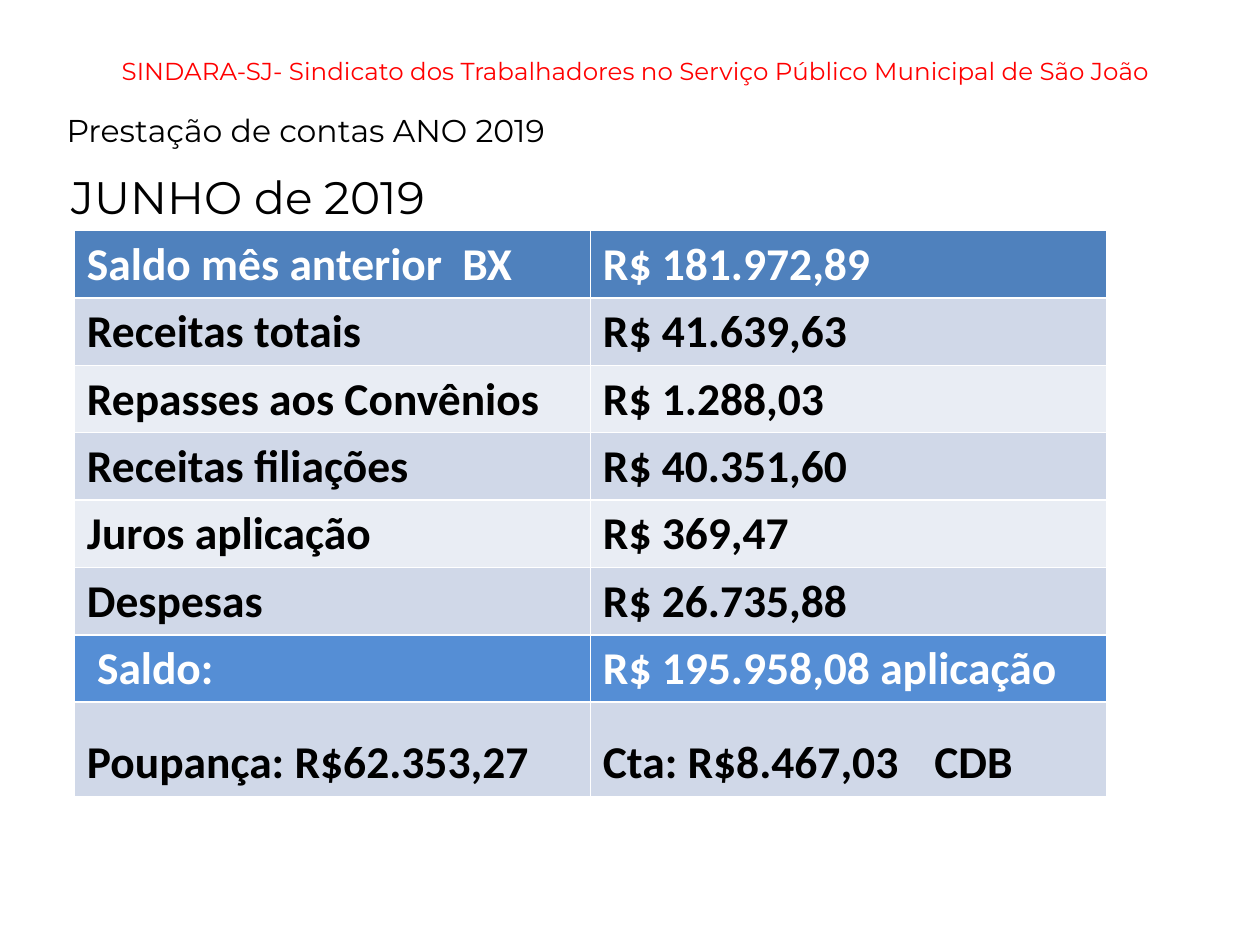
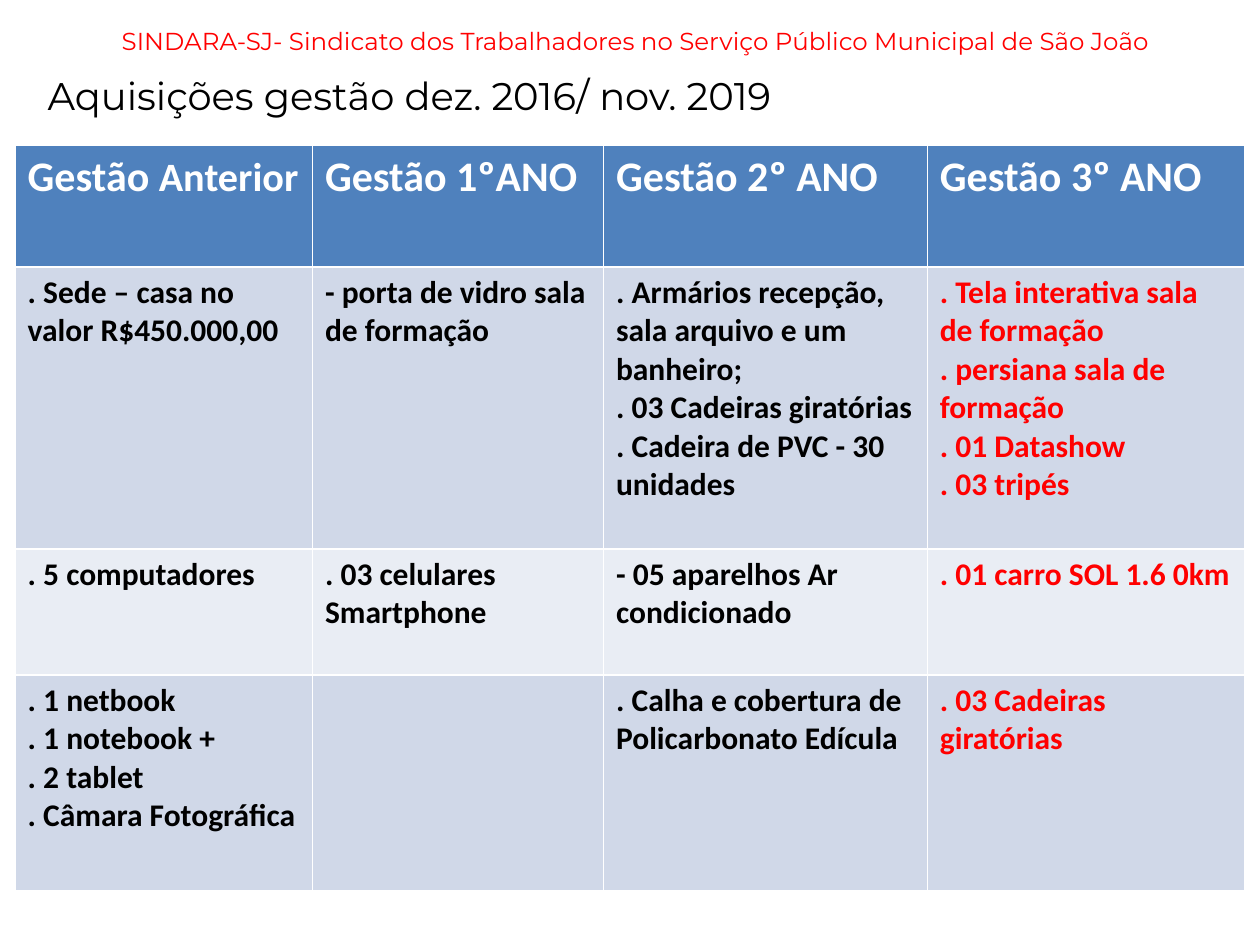
import pptx
import pptx.util
import pptx.dml.color
import pptx.enum.text
import lxml.etree

WIDTH, HEIGHT = 10, 7.5
BLACK, WHITE, RED = "000000", "FFFFFF", "FF0000"
HEADER, TOTAL = "4F81BD", "558ED5"
BANDS = ("E9EDF4", "D0D8E8")
TITLE_FONT, TABLE_FONT = "Montserrat", "Calibri"
UNION = "SINDARA-SJ- Sindicato dos Trabalhadores no Serviço Público Municipal de São João"
ALIGN = pptx.enum.text.PP_ALIGN
ANCHOR = pptx.enum.text.MSO_ANCHOR

BALANCE = [
    ("Saldo mês anterior\tBX", "R$ 181.972,89"),
    ("Receitas totais", "R$ 41.639,63"),
    ("Repasses aos Convênios", "R$ 1.288,03"),
    ("Receitas filiações", "R$ 40.351,60"),
    ("Juros aplicação", "R$ 369,47"),
    ("Despesas", "R$ 26.735,88"),
    ("Saldo:", "R$ 195.958,08 aplicação"),
    ("Poupança: R$62.353,27", "Cta: R$8.467,03\tCDB"),
]
PURCHASES = [
    ("Gestão ", "Gestão 1ºANO", "Gestão 2º ANO", "Gestão 3º ANO"),
    (". Sede – casa no valor R$450.000,00",
     "- porta de vidro sala de formação",
     ". Armários recepção, sala arquivo e um banheiro;\n"
     ". 03 Cadeiras giratórias\n. Cadeira de PVC - 30 unidades",
     ". Tela interativa sala de formação\n. persiana sala de formação\n"
     ". 01 Datashow\n. 03 tripés"),
    (". 5 computadores", ". 03 celulares Smartphone",
     "- 05 aparelhos Ar condicionado", ". 01 carro SOL 1.6 0km"),
    (". 1 netbook\n. 1 notebook +\n. 2 tablet\n. Câmara Fotográfica", "",
     ". Calha e cobertura de Policarbonato Edícula", ". 03 Cadeiras giratórias"),
]


def color(value):
    return pptx.dml.color.RGBColor.from_string(value)


def percent_box(x, y, w, h):
    return [pptx.util.Inches(share * side / 100)
            for share, side in ((x, WIDTH), (y, HEIGHT), (w, WIDTH), (h, HEIGHT))]


def style_text(tf, size, ink, font, bold=False):
    for p in tf.paragraphs:
        for r in p.runs:
            r.font.size = pptx.util.Pt(size)
            r.font.name = font
            r.font.bold = bold
            r.font.color.rgb = color(ink)


def add_text(slide, box, text, size, ink=BLACK, align=ALIGN.LEFT, anchor=ANCHOR.TOP):
    tf = slide.shapes.add_textbox(*percent_box(*box)).text_frame
    tf.word_wrap = True
    tf.vertical_anchor = anchor
    tf.text = text
    tf.paragraphs[0].alignment = align
    style_text(tf, size, ink, TITLE_FONT)


def add_union_title(slide, top, height):
    add_text(slide, (2, top, 96.9, height), UNION, 14, RED, ALIGN.CENTER, ANCHOR.MIDDLE)


def add_tab_stop(cell, inches):
    pPr = cell.text_frame.paragraphs[0]._p.get_or_add_pPr()
    tabs = lxml.etree.SubElement(pPr, pptx.oxml.ns.qn("a:tabLst"))
    tab = lxml.etree.SubElement(tabs, pptx.oxml.ns.qn("a:tab"))
    tab.set("pos", str(pptx.util.Inches(inches)))
    tab.set("algn", "l")


def add_grid(slide, box, rows, col_shares, row_shares, head_size, body_size,
             total_row=None, red_col=None):
    x, y, w, h = percent_box(*box)
    table = slide.shapes.add_table(len(rows), len(col_shares), x, y, w, h).table
    for col, share in zip(table.columns, col_shares):
        col.width = int(w * share / sum(col_shares))
    for row, share in zip(table.rows, row_shares):
        row.height = int(h * share / sum(row_shares))
    for i, values in enumerate(rows):
        strong = i in (0, total_row)
        fill = HEADER if i == 0 else TOTAL if strong else BANDS[i % 2]
        for j, value in enumerate(values):
            cell = table.cell(i, j)
            cell.fill.solid()
            cell.fill.fore_color.rgb = color(fill)
            cell.text_frame.text = value
            ink = WHITE if strong else RED if j == red_col else BLACK
            style_text(cell.text_frame, body_size if i else head_size, ink, TABLE_FONT, True)
    return table


def build_balance_slide(slide):
    add_union_title(slide, 1.73, 11.6)
    add_text(slide, (4.3, 11.07, 92.1, 5.33), "Prestação de contas ANO 2019", 18)
    table = add_grid(slide, (5.9, 24.4, 81.9, 60), BALANCE, (1, 1),
                     [53.5] * 7 + [75.5], 26, 26, total_row=6)
    add_tab_stop(table.cell(0, 0), 2.98)
    add_tab_stop(table.cell(7, 1), 2.63)
    table.cell(6, 0).margin_left = pptx.util.Inches(0.18)
    for cell in table.rows[7].cells:
        cell.vertical_anchor = ANCHOR.BOTTOM
    add_text(slide, (4.7, 17.2, 65.4, 7.2), "JUNHO de 2019", 26)


def build_purchases_slide(slide):
    add_union_title(slide, 1.73, 5.2)
    add_text(slide, (2.8, 6.93, 91.3, 6.27), "Aquisições gestão dez. 2016/ nov. 2019", 22)
    table = add_grid(slide, (1.2, 15.33, 97.6, 78.93), PURCHASES,
                     (2.36, 2.31, 2.57, 2.52), (0.97, 2.24, 1, 1.71), 24, 18, red_col=3)
    r = table.cell(0, 0).text_frame.paragraphs[0].add_run()
    r.text = "Anterior"
    r.font.size = pptx.util.Pt(23)
    r.font.name = TABLE_FONT
    r.font.bold = True
    r.font.color.rgb = color(WHITE)


def main():
    prs = pptx.Presentation()
    prs.slide_width = pptx.util.Inches(WIDTH)
    prs.slide_height = pptx.util.Inches(HEIGHT)
    for build in (build_balance_slide, build_purchases_slide):
        build(prs.slides.add_slide(prs.slide_layouts[6]))
    prs.save("out.pptx")


if __name__ == "__main__":
    main()
